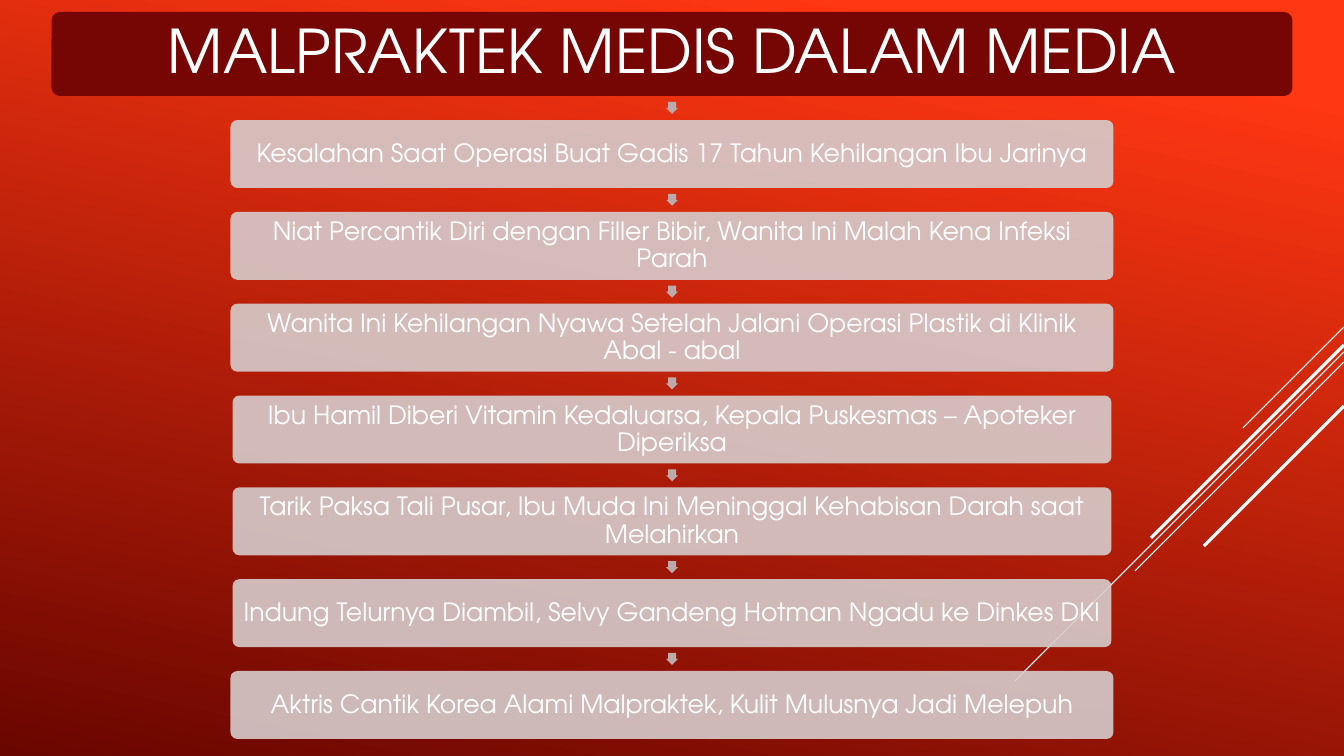
"""Build the slide listing medical malpractice headlines as a vertical chain."""
from lxml import etree
from pptx import Presentation
from pptx.dml.color import RGBColor
from pptx.enum.shapes import MSO_CONNECTOR, MSO_SHAPE
from pptx.enum.text import MSO_ANCHOR, PP_ALIGN
from pptx.oxml.ns import qn
from pptx.util import Emu, Pt

TITLE = "MALPRAKTEK MEDIS DALAM MEDIA"
WIDE, NARROW = 883, 879
HEADLINES = [
    ("Kesalahan Saat Operasi Buat Gadis 17 Tahun Kehilangan Ibu Jarinya", WIDE),
    ("Niat Percantik Diri dengan Filler Bibir, Wanita Ini Malah Kena Infeksi Parah", WIDE),
    ("Wanita Ini Kehilangan Nyawa Setelah Jalani Operasi Plastik di Klinik Abal - abal", WIDE),
    ("Ibu Hamil Diberi Vitamin Kedaluarsa, Kepala Puskesmas – Apoteker Diperiksa", NARROW),
    ("Tarik Paksa Tali Pusar, Ibu Muda Ini Meninggal Kehabisan Darah saat Melahirkan", NARROW),
    ("Indung Telurnya Diambil, Selvy Gandeng Hotman Ngadu ke Dinkes DKI", NARROW),
    ("Aktris Cantik Korea Alami Malpraktek, Kulit Mulusnya Jadi Melepuh", WIDE),
]
# (y at the right edge, horizontal and vertical reach, weight)
DIAGONALS = [(327, 101, 0.75), (352, 329, 0.75), (362, 209, 0.75), (345, 193, 2.25), (406, 140, 2.25)]
COLORS = {"bg_light": "FF3712", "bg_dark": "6A0600", "title": "760603",
          "box": "D6CCCC", "arrow": "BDABAB", "white": "FFFFFF"}
FONT = "TeX Gyre Adventor"
SLIDE_W, SLIDE_H = 1344, 756
FIRST_TOP, LAST_TOP, BOX_H = 120, 671, 68
ARROW, ARROW_RISE = 12, 18


def px(n):
    return Emu(round(n * 914400 / 100.8))


def rgb(name):
    return RGBColor.from_string(COLORS[name])


def paint_background(slide):
    fill = slide.background.fill
    fill.gradient()
    fill.gradient_angle = 258
    for stop, name, pos in zip(fill.gradient_stops, ("bg_light", "bg_dark"), (0.1, 1)):
        stop.color.rgb = rgb(name)
        stop.position = pos


def add_diagonal(slide, y, reach, weight):
    line = slide.shapes.add_connector(
        MSO_CONNECTOR.STRAIGHT, px(SLIDE_W), px(y), px(SLIDE_W - reach), px(y + reach))
    line.line.color.rgb = rgb("white")
    line.line.width = Pt(weight)
    etree.SubElement(line._element.spPr, qn("a:effectLst"))


def add_shape(slide, kind, left, top, width, height, color, adjustments):
    sp = slide.shapes.add_shape(kind, px(left), px(top), px(width), px(height))
    sp.shadow.inherit = False
    sp.fill.solid()
    sp.fill.fore_color.rgb = rgb(color)
    sp.line.fill.background()
    for i, value in enumerate(adjustments):
        sp.adjustments[i] = value
    return sp


def add_box(slide, text, top, width, height, color, size, inset):
    sp = add_shape(slide, MSO_SHAPE.ROUNDED_RECTANGLE, (SLIDE_W - width) / 2, top,
                   width, height, color, [0.1])
    tf = sp.text_frame
    tf.word_wrap = True
    tf.vertical_anchor = MSO_ANCHOR.MIDDLE
    tf.margin_left = tf.margin_right = tf.margin_top = tf.margin_bottom = px(inset)
    tf.text = text
    p = tf.paragraphs[0]
    p.alignment = PP_ALIGN.CENTER
    p.line_spacing = 0.9
    font = p.runs[0].font
    font.name, font.size = FONT, Pt(size)
    font.color.rgb = rgb("white")
    return sp


def set_alpha(sp, percent):
    clr = sp._element.spPr.find(qn("a:solidFill")).find(qn("a:srgbClr"))
    etree.SubElement(clr, qn("a:alpha")).set("val", str(percent * 1000))


def main():
    prs = Presentation()
    prs.slide_width, prs.slide_height = px(SLIDE_W), px(SLIDE_H)
    slide = prs.slides.add_slide(prs.slide_layouts[6])
    paint_background(slide)
    for diagonal in DIAGONALS:
        add_diagonal(slide, *diagonal)
    add_box(slide, TITLE, 12, 1241, 84, "title", 43, 9)
    pitch = (LAST_TOP - FIRST_TOP) / (len(HEADLINES) - 1)
    for i, (text, width) in enumerate(HEADLINES):
        top = FIRST_TOP + i * pitch
        arrow = add_shape(slide, MSO_SHAPE.RIGHT_ARROW, (SLIDE_W - ARROW) / 2,
                          top - ARROW_RISE, ARROW, ARROW, "arrow", [0.667, 0.5])
        arrow.rotation = 90
        set_alpha(add_box(slide, text, top, width, BOX_H, "box", 18, 5), 90)
    prs.save("out.pptx")


if __name__ == "__main__":
    main()
